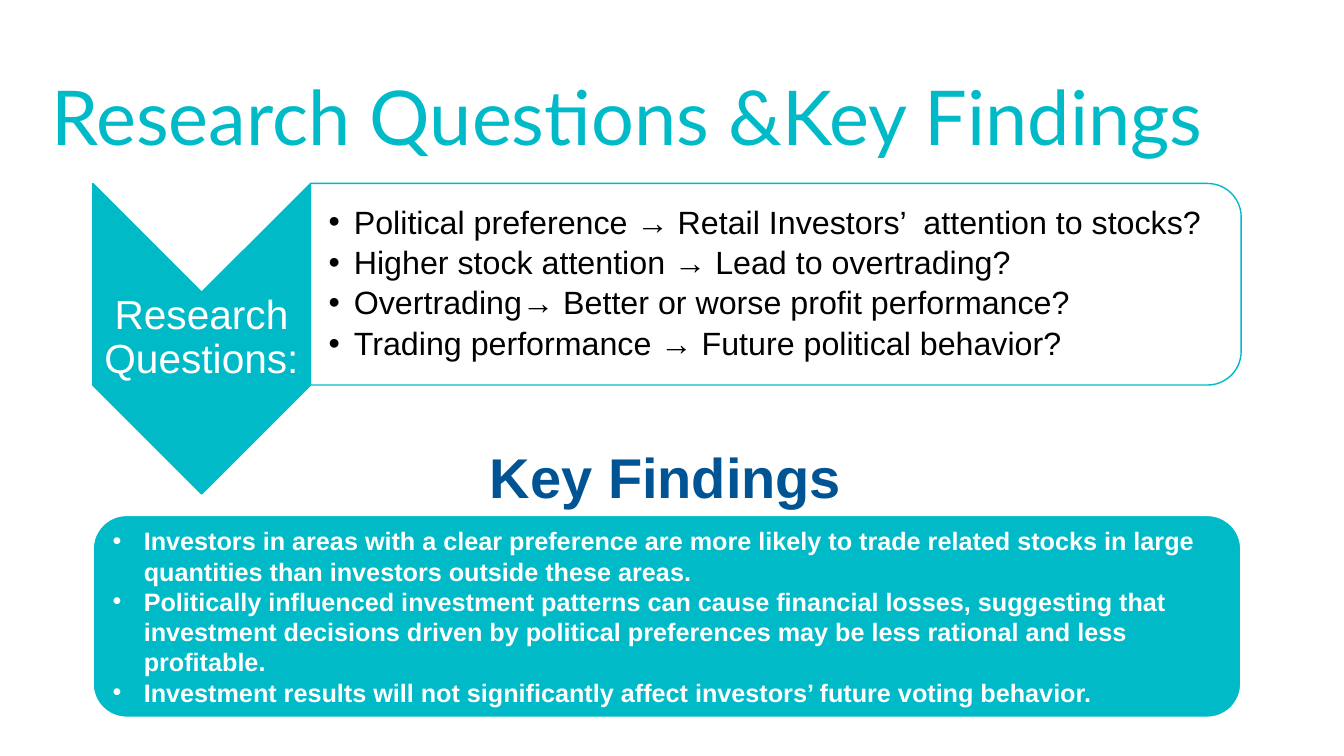
"""Build the research questions and key findings slide."""
from lxml import etree
from pptx import Presentation, util as u
from pptx.dml.color import RGBColor
from pptx.enum import shapes, text
from pptx.oxml.ns import qn

TITLE = "Research Questions &Key Findings"
LABEL = "Research Questions:"
QUESTIONS = [
    "Political preference → Retail Investors’  attention to stocks?",
    "Higher stock attention → Lead to overtrading?",
    "Overtrading→ Better or worse profit performance?",
    "Trading performance → Future political behavior?",
]
HEADING = "Key Findings"
FINDINGS = [
    "Investors in areas with a clear preference are more likely to trade related stocks "
    "in large quantities than investors outside these areas.",
    "Politically influenced investment patterns can cause financial losses, suggesting that "
    "investment decisions driven by political preferences may be less rational and less profitable.",
    "Investment results will not significantly affect investors’ future voting behavior.",
]
THEME = {
    "teal": "00BAC8", "white": "FFFFFF", "black": "000000", "navy": "005493",
    "display": "Lato", "body": "Arial",
    "title": 54, "label": 29, "question": 23, "finding": 18, "heading": 40,
}
SHAPE = shapes.MSO_SHAPE
MIDDLE = text.MSO_ANCHOR.MIDDLE


def rgb(name):
    return RGBColor.from_string(THEME[name])


def add_panel(s, kind, box, fill, line, width, rotation=0):
    sp = s.shapes.add_shape(kind, *map(u.Inches, box))
    sp.shadow.inherit = False
    sp.rotation = rotation
    sp.fill.solid()
    sp.fill.fore_color.rgb = rgb(fill)
    sp.line.color.rgb = rgb(line)
    sp.line.width = u.Pt(width)
    return sp


def add_box(s, box):
    return s.shapes.add_textbox(*map(u.Inches, box))


def write(sp, lines, size, color, font="body", bold=False, anchor=None,
          insets=(0.1, 0.05, 0.1, 0.05), indent=0, **para):
    tf = sp.text_frame
    tf.word_wrap = True
    tf.vertical_anchor = anchor
    for side, inset in zip(("left", "top", "right", "bottom"), insets):
        setattr(tf, f"margin_{side}", u.Inches(inset))
    for i, line in enumerate(lines):
        p = tf.add_paragraph() if i else tf.paragraphs[0]
        for key, value in {"alignment": text.PP_ALIGN.LEFT, **para}.items():
            setattr(p, key, value)
        r = p.add_run()
        r.text = line
        for key, value in {"name": THEME[font], "size": u.Pt(THEME[size]), "bold": bold}.items():
            setattr(r.font, key, value)
        r.font.color.rgb = rgb(color)
        if indent:
            ppr = p._p.get_or_add_pPr()
            ppr.set("marL", str(u.Inches(indent)))
            ppr.set("indent", str(-u.Inches(indent)))
            etree.SubElement(ppr, qn("a:buFont")).set("typeface", "Arial")
            etree.SubElement(ppr, qn("a:buChar")).set("char", "•")


def upright(box):
    """Return the unrotated frame of a shape that fills box after a quarter turn."""
    x, y, w, h = box
    return x + (w - h) / 2, y + (h - w) / 2, h, w


def main():
    prs = Presentation()
    prs.slide_width, prs.slide_height = u.Inches(13.33), u.Inches(7.5)
    s = prs.slides.add_slide(prs.slide_layouts[6])

    left, top, arrow_w, arrow_h = 0.92, 1.82, 2.16, 3.08
    panel_x, panel_w, panel_h = left + arrow_w, 9.23, 2

    write(add_box(s, (0.41, 0.16, 13.2, 1.45)), [TITLE], "title", "teal", "display",
          anchor=text.MSO_ANCHOR.BOTTOM, insets=(0.1, 0.05, 0.1, 0), line_spacing=0.9)

    add_panel(s, SHAPE.CHEVRON, upright((left, top, arrow_w, arrow_h)), "teal", "teal", 1, 90)
    write(add_box(s, (left, top + arrow_w / 2, arrow_w, arrow_h - 2 * arrow_w / 2)),
          [LABEL], "label", "white", anchor=MIDDLE, insets=(0.02,) * 4,
          alignment=text.PP_ALIGN.CENTER, line_spacing=0.9)

    add_panel(s, SHAPE.ROUND_2_SAME_RECTANGLE, upright((panel_x, top, panel_w, panel_h)),
              "white", "teal", 1, 90)
    write(add_box(s, (panel_x, top + 0.1, panel_w - 0.1, panel_h - 0.2)), QUESTIONS,
          "question", "black", anchor=MIDDLE, insets=(0.18, 0.02, 0.02, 0.02),
          indent=0.25, line_spacing=0.9, space_after=u.Pt(4))

    findings = add_panel(s, SHAPE.ROUNDED_RECTANGLE, (left, 5.11, arrow_w + panel_w, 2.01),
                         "teal", "white", 1.5)
    write(findings, FINDINGS, "finding", "white", bold=True, anchor=MIDDLE, indent=0.31)
    write(add_box(s, (4.76, 4.34, 3.82, 0.77)), [HEADING], "heading", "navy", bold=True)

    prs.save("out.pptx")


if __name__ == "__main__":
    main()
